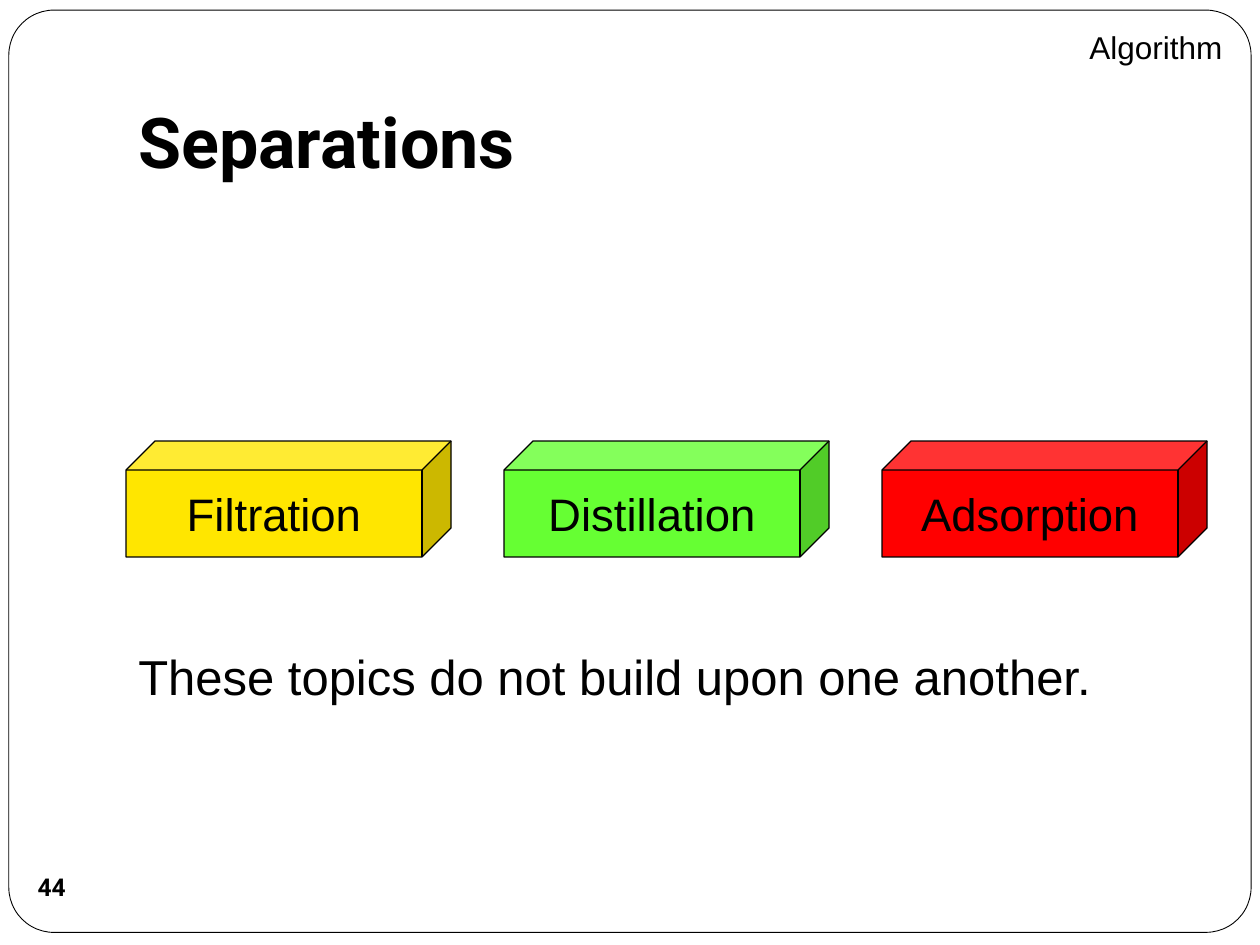
import pptx
import pptx.util
import pptx.dml.color
import pptx.enum.shapes
import pptx.enum.text

WIDE, HIGH = 10, 7.5
LEFT, STEP = 1, 3  # first column and column pitch
INK = {"black": "000000", "white": "FFFFFF", "yellow": "FFE600",
       "green": "66FF33", "red": "FF0000"}
TOPICS = [("Filtration", "yellow"), ("Distillation", "green"),
          ("Adsorption", "red")]
KIND = pptx.enum.shapes.MSO_SHAPE
SIDE = pptx.enum.text.PP_ALIGN
ROW = pptx.enum.text.MSO_ANCHOR


def color(name):
    return pptx.dml.color.RGBColor.from_string(INK[name])


def inches(box):
    return [pptx.util.Inches(part) for part in box]


def write(shape, text, size, font="Arial", bold=False, side=SIDE.LEFT,
          row=ROW.TOP, wrap=True):
    frame = shape.text_frame
    frame.word_wrap = wrap
    frame.vertical_anchor = row
    line = frame.paragraphs[0]
    line.text = text
    line.alignment = side
    line.font.name = font
    line.font.size = pptx.util.Pt(size)
    line.font.bold = bold
    line.font.color.rgb = color("black")
    return frame


def label(slide, box, text, size, **style):
    return write(slide.shapes.add_textbox(*inches(box)), text, size, **style)


def solid(slide, kind, box, fill=None, edge=None, adjust=None):
    shape = slide.shapes.add_shape(kind, *inches(box))
    shape.shadow.inherit = False
    if fill:
        shape.fill.solid()
        shape.fill.fore_color.rgb = color(fill)
    else:
        shape.fill.background()
    if edge:
        shape.line.color.rgb = color("black")
        shape.line.width = pptx.util.Pt(edge)
    else:
        shape.line.fill.background()
    if adjust is not None:
        shape.adjustments[0] = adjust
    return shape


def main():
    deck = pptx.Presentation()
    deck.slide_width, deck.slide_height = inches((WIDE, HIGH))
    slide = deck.slides.add_slide(deck.slide_layouts[6])

    # Rounded page frame
    solid(slide, KIND.ROUNDED_RECTANGLE, (0.07, 0.08, 9.86, 7.32),
          "white", 0.5, 0.049)

    # Closing remark
    label(slide, (LEFT, 5.08, 8.5, 0.57),
          "These topics do not build upon one another.", 28)

    # One block per topic
    for col, (name, fill) in enumerate(TOPICS):
        block = solid(slide, KIND.CUBE, (LEFT + col * STEP, 3.5, 2.58, 0.92),
                      fill, 0.75, 0.25)
        write(block, name, 26, side=SIDE.CENTER, row=ROW.MIDDLE, wrap=False)

    # Page number
    badge = solid(slide, KIND.OVAL, (0.16, 6.79, 0.5, 0.5))
    frame = write(badge, "44", 14, "Roboto", True, SIDE.CENTER, ROW.MIDDLE,
                  False)
    frame.margin_left = frame.margin_right = 0
    frame.margin_top = frame.margin_bottom = 0

    # Title and section name
    title = label(slide, (LEFT, 0.3, 8.5, 1.25), "Separations", 40,
                  font="Roboto", bold=True, row=ROW.BOTTOM)
    title.margin_bottom = pptx.util.Inches(0.1)
    label(slide, (7.04, 0.17, 2.76, 0.4), "Algorithm", 18, side=SIDE.RIGHT)

    deck.save("out.pptx")


if __name__ == "__main__":
    main()
